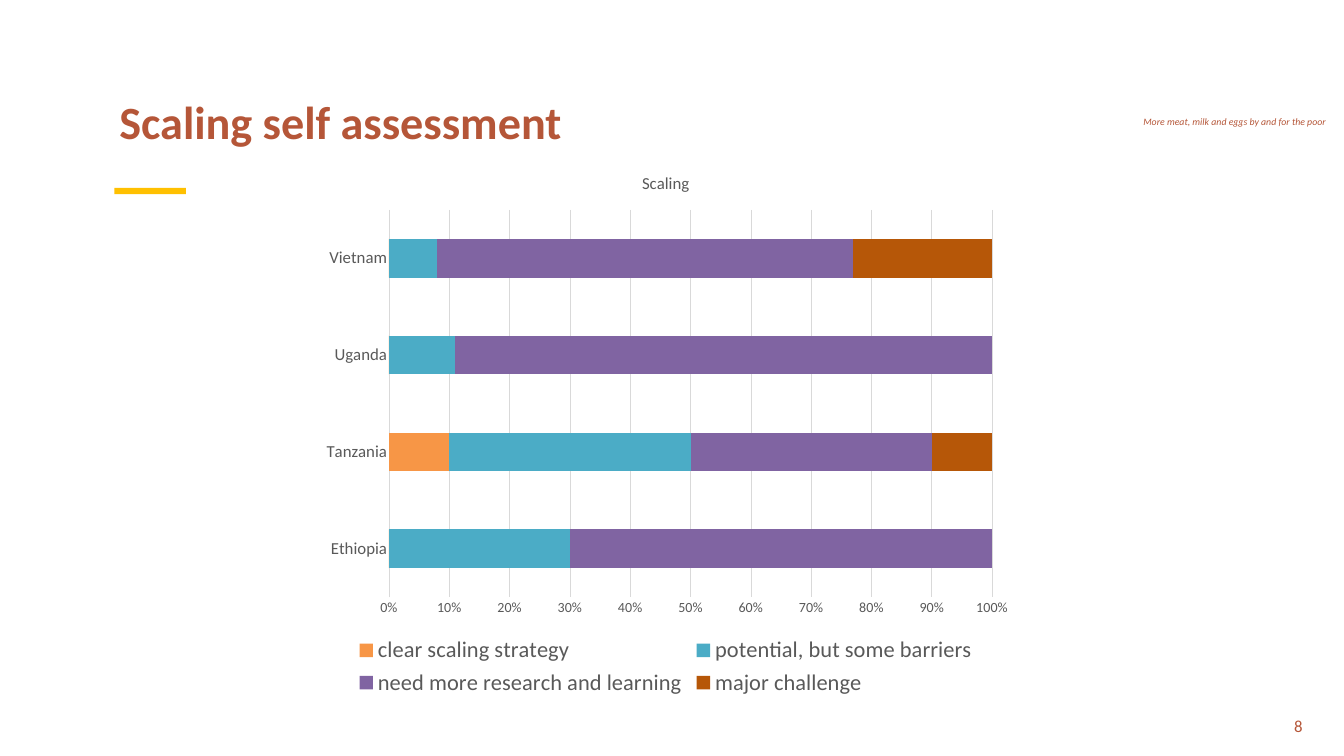
from lxml import etree
from pptx import Presentation
from pptx.chart.data import CategoryChartData
from pptx.dml.color import RGBColor
from pptx.enum.chart import XL_CHART_TYPE, XL_LEGEND_POSITION, XL_TICK_MARK
from pptx.enum.shapes import MSO_SHAPE
from pptx.enum.text import PP_ALIGN
from pptx.oxml.ns import qn
from pptx.util import Inches, Pt

STACKED = XL_CHART_TYPE.BAR_STACKED_100
BOTTOM = XL_LEGEND_POSITION.BOTTOM
NO_TICK = XL_TICK_MARK.NONE
RECT = MSO_SHAPE.RECTANGLE
LEFT, RIGHT = PP_ALIGN.LEFT, PP_ALIGN.RIGHT

# Content
TITLE = "Scaling self assessment"
TAGLINE = "More meat, milk and eggs by and for the poor"
PAGE = "8"
CHART_TITLE = "Scaling"
COUNTRIES = ["Ethiopia", "Tanzania", "Uganda", "Vietnam"]
RATINGS = [
    ("clear scaling strategy", (0, 10, 0, 0), "F79646"),
    ("potential, but some barriers", (30, 40, 11, 8), "4BACC6"),
    ("need more research and learning", (70, 40, 89, 69), "8064A2"),
    ("major challenge", (0, 10, 0, 23), "B65708"),
]
PLOT_LAYOUT = {"x": 0.11, "y": 0.1, "w": 0.85, "h": 0.71}

THEME = {
    "font": "Calibri", "brand": "B55638", "accent": "FFC000",
    "label": "595959", "grid": "D9D9D9",
    "title": 66, "legend": 32, "body": 24, "scale": 20, "small": 14,
}


def rgb(name):
    return RGBColor.from_string(THEME.get(name, name))


def style(font, size, color, bold=False, italic=False):
    font.name = THEME["font"]
    font.size = Pt(THEME[size])
    font.color.rgb = rgb(color)
    font.bold, font.italic = bold, italic


def add_text(s, text, box, size, align=LEFT, wrap=True, **fmt):
    tf = s.shapes.add_textbox(*map(Inches, box)).text_frame
    tf.word_wrap = wrap
    p = tf.paragraphs[0]
    p.alignment = align
    r = p.add_run()
    r.text = text
    style(r.font, size, "brand", **fmt)


def set_plot_layout(chart):
    area = chart._chartSpace.chart.plotArea
    for old in area.findall(qn("c:layout")):
        area.remove(old)
    layout = etree.Element(qn("c:layout"))
    manual = etree.SubElement(layout, qn("c:manualLayout"))
    parts = [("layoutTarget", "inner"), ("xMode", "edge"), ("yMode", "edge")]
    for tag, val in parts + list(PLOT_LAYOUT.items()):
        etree.SubElement(manual, qn("c:" + tag)).set("val", str(val))
    area.insert(0, layout)


def add_ratings_chart(s, box):
    data = CategoryChartData()
    data.categories = COUNTRIES
    for name, values, _ in RATINGS:
        data.add_series(name, values)
    chart = s.shapes.add_chart(STACKED, *map(Inches, box), data).chart
    style(chart.font, "scale", "label")

    # Title and legend
    p = chart.chart_title.text_frame.paragraphs[0]
    r = p.add_run()
    r.text = CHART_TITLE
    style(r.font, "body", "label")
    chart.has_legend = True
    chart.legend.position = BOTTOM
    chart.legend.include_in_layout = False
    style(chart.legend.font, "legend", "label")

    # Bars
    plot = chart.plots[0]
    plot.gap_width, plot.overlap = 150, 100
    plot.vary_by_categories = False
    for series, (_, _, color) in zip(plot.series, RATINGS):
        series.format.fill.solid()
        series.format.fill.fore_color.rgb = rgb(color)

    # Axes
    cat, val = chart.category_axis, chart.value_axis
    for axis, size in ((cat, "body"), (val, "scale")):
        axis.major_tick_mark = axis.minor_tick_mark = NO_TICK
        style(axis.tick_labels.font, size, "label")
    val.format.line.fill.background()
    val.has_major_gridlines = True
    for line in (cat.format.line, val.major_gridlines.format.line):
        line.color.rgb = rgb("grid")
        line.width = Pt(0.75)
    val.minimum_scale, val.maximum_scale, val.major_unit = 0, 1, 0.1
    val.tick_labels.number_format = "0%"
    val.tick_labels.number_format_is_linked = False
    set_plot_layout(chart)


def main():
    prs = Presentation()
    prs.slide_width, prs.slide_height = Inches(26.67), Inches(15)
    s = prs.slides.add_slide(prs.slide_layouts[6])

    # Page furniture
    add_text(s, PAGE, (25.25, 14.16, 0.7, 0.5), "body", align=RIGHT)
    bar = s.shapes.add_shape(RECT, *map(Inches, (2.27, 3.73, 1.42, 0.12)))
    bar.shadow.inherit = False
    bar.fill.solid()
    bar.fill.fore_color.rgb = rgb("accent")
    bar.line.fill.background()
    add_text(s, TAGLINE, (22.59, 2.25, 3.85, 0.34), "small",
             wrap=False, italic=True)

    # Heading and chart
    add_text(s, TITLE, (2.27, 1.81, 17.98, 1.92), "title", bold=True)
    add_ratings_chart(s, (6.17, 3.08, 14.08, 10.83))
    prs.save("out.pptx")


if __name__ == "__main__":
    main()
